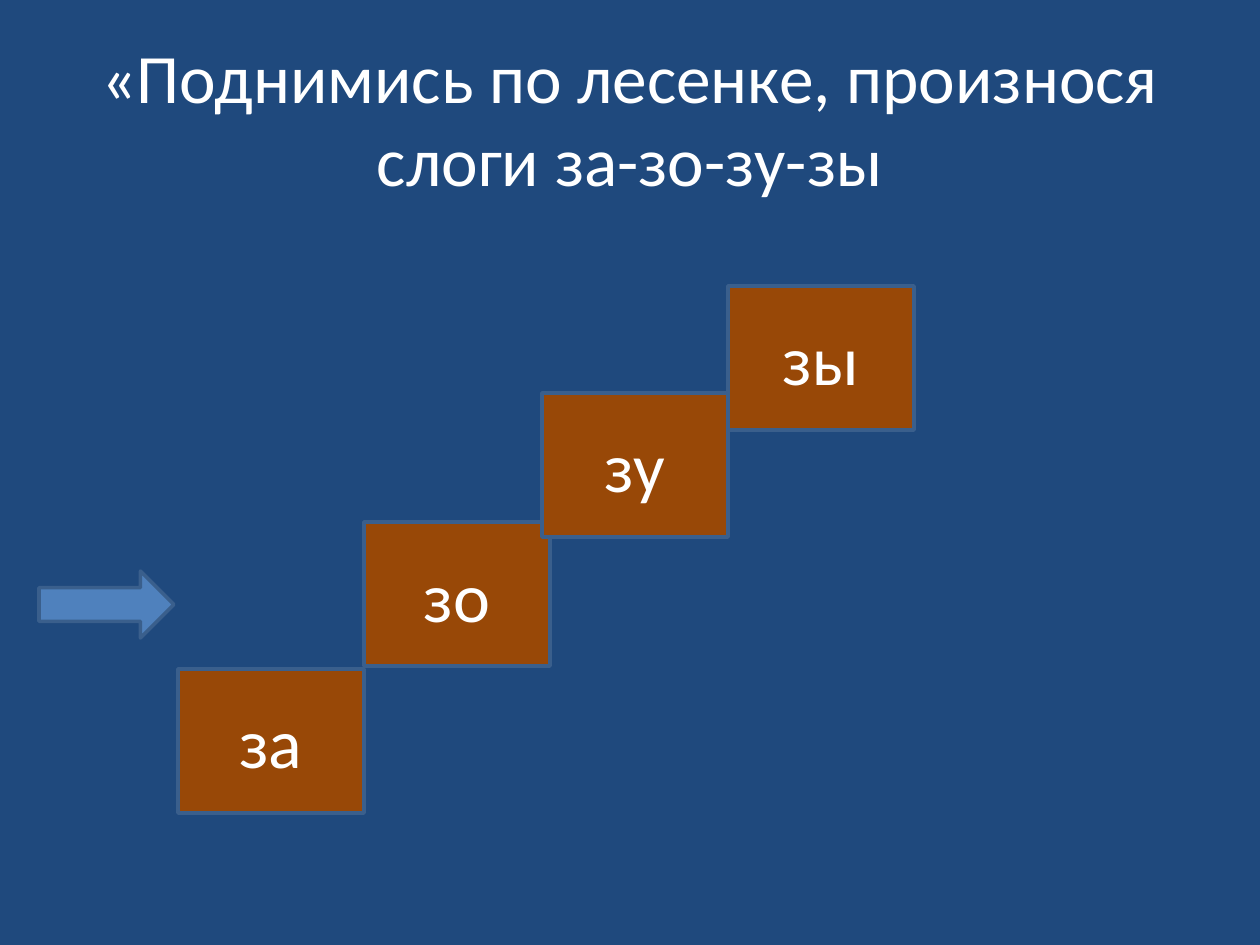
from pptx import Presentation
from pptx.dml.color import RGBColor
from pptx.enum.shapes import MSO_SHAPE
from pptx.enum.text import MSO_ANCHOR, MSO_AUTO_SIZE, PP_ALIGN
from pptx.util import Emu, Pt

PX = 914400 / 126
NAVY = RGBColor(0x1F, 0x49, 0x7D)
BROWN = RGBColor(0x98, 0x48, 0x07)
BLUE = RGBColor(0x4F, 0x81, 0xBD)
OUTLINE = RGBColor(0x3A, 0x5F, 0x8C)
WHITE = RGBColor(0xFF, 0xFF, 0xFF)

STEP_SIZE = (186, 144)
# Syllable with the left and top of its step, relative to the staircase
STEPS = [("за", 0, 383), ("зо", 186, 236), ("зу", 364, 107), ("зы", 550, 0)]


def px(length):
    return Emu(round(length * PX))


def set_values(target, values):
    for name, value in values.items():
        setattr(target, name, value)


def write_text(shape, text, size):
    frame = shape.text_frame
    frame.text = text
    set_values(frame, {"word_wrap": True, "auto_size": MSO_AUTO_SIZE.NONE,
                       "vertical_anchor": MSO_ANCHOR.MIDDLE})
    paragraph = frame.paragraphs[0]
    paragraph.alignment = PP_ALIGN.CENTER
    font = paragraph.runs[0].font
    set_values(font, {"name": "Calibri", "size": Pt(size)})
    font.color.rgb = WHITE


def add_outlined_shape(slide, kind, box, fill):
    shape = slide.shapes.add_shape(kind, *map(px, box))
    shape.shadow.inherit = False
    shape.fill.solid()
    shape.fill.fore_color.rgb = fill
    shape.line.color.rgb = OUTLINE
    shape.line.width = Pt(2)
    return shape


def place_title(slide, box):
    title = slide.shapes.title
    set_values(title, dict(zip(("left", "top", "width", "height"), map(px, box))))
    write_text(title, "«Поднимись по лесенке, произнося слоги за-зо-зу-зы", 39.6)


def add_staircase(slide, left, top):
    for syllable, across, down in STEPS:
        box = (left + across, top + down, *STEP_SIZE)
        step = add_outlined_shape(slide, MSO_SHAPE.FLOWCHART_PROCESS, box, BROWN)
        write_text(step, syllable, 40)


def main():
    presentation = Presentation()
    set_values(presentation, {"slide_width": px(1260), "slide_height": px(945)})
    slide = presentation.slides.add_slide(presentation.slide_layouts[5])
    slide.background.fill.solid()
    slide.background.fill.fore_color.rgb = NAVY

    # Heading, staircase of syllables, arrow to the first step
    place_title(slide, (63, 38, 1134, 158))
    add_staircase(slide, 178, 286)
    add_outlined_shape(slide, MSO_SHAPE.RIGHT_ARROW, (39, 571, 135, 67), BLUE)

    presentation.save("out.pptx")


if __name__ == "__main__":
    main()
